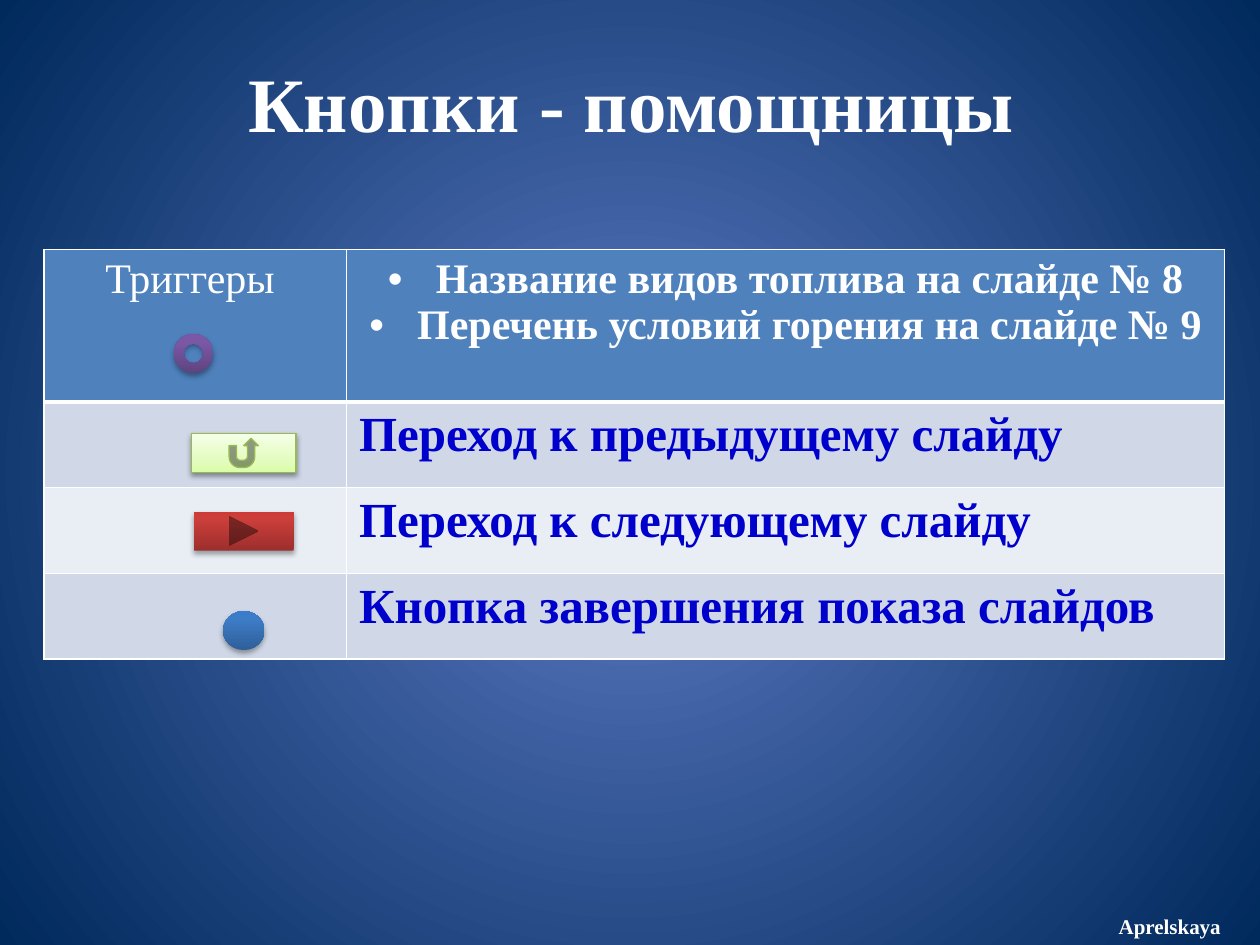
from lxml import etree
from pptx import Presentation, util as u
from pptx.dml.color import RGBColor
from pptx.enum import shapes, text
from pptx.oxml import ns

TITLE = "Кнопки - помощницы"
HEAD = ["Триггеры "], ["Название видов топлива на слайде № 8",
                       "Перечень условий горения на слайде № 9"]
ROWS = ["Переход к предыдущему слайду", "Переход к следующему слайду",
        "Кнопка завершения показа слайдов"]
SIGN = "Aprelskaya"

THEME = {
    "font": "Times New Roman", "white": "FFFFFF", "blue": "0000CC",
    "head": "4F81BD", "bands": ["D0D8E8", "E9EDF4"], "edge": "98B955",
    "title": 44, "cell": 24, "row": 28, "sign": 12,
    "back": [(0, "5E7CC5"), (100, "00295C")],
    "lime": [(0, "DAFDA7"), (35, "E4FCC2"), (100, "F5FFE7")],
    "red": [(0, "9C2F2D"), (80, "CB3E3A"), (100, "CE3B37")],
    "sky": [(0, "2F5F99"), (80, "3D7CC7"), (100, "3A7CCB")],
    "plum": [(0, "5F4480"), (80, "7B58A6"), (100, "7C57A8")],
}
KIND = shapes.MSO_SHAPE
ICONS = [
    (KIND.ACTION_BUTTON_RETURN, (1.52, 3.44, 0.83, 0.31), "lime", 38, 1.6),
    (KIND.ACTION_BUTTON_FORWARD_OR_NEXT, (1.54, 4.06, 0.79, 0.31), "red", 35, 1.8),
    (KIND.OVAL, (1.77, 4.85, 0.33, 0.31), "sky", 35, 1.8),
    (KIND.DONUT, (1.38, 2.65, 0.31, 0.31), "plum", 35, 1.8),
]
COLS = [2.4, 6.97]
TALLS = [1.21] + [0.68] * len(ROWS)
LEFT, TOP = 0.35, 1.98
MID = text.PP_ALIGN.CENTER


def box(*nums):
    return [u.Inches(n) for n in nums]


def node(xml):
    tag, rest = xml.split(" ", 1) if " " in xml.split(">")[0] else (xml.split(">")[0], None)
    space = f' xmlns:a="{ns.nsuri("a")}"'
    return etree.fromstring(tag + space + xml[len(tag):])


def blend(fill, stops, way):
    fill.gradient()
    grad = fill._xPr.find(ns.qn("a:gradFill"))
    for kid in list(grad):
        grad.remove(kid)
    marks = "".join(f'<a:gs pos="{pos * 1000}"><a:srgbClr val="{hue}"/></a:gs>'
                    for pos, hue in stops)
    grad.append(node(f"<a:gsLst>{marks}</a:gsLst>"))
    grad.append(node(way))


def style(part, **form):
    for key, val in form.items():
        setattr(part, key, val)


def write(para, words, size, hue, bold=True):
    para.text = words
    style(para.font, name=THEME["font"], size=u.Pt(size), bold=bold)
    para.font.color.rgb = RGBColor.from_string(hue)


def paint(cell, hue, base):
    cell.fill.solid()
    cell.fill.fore_color.rgb = RGBColor.from_string(hue)
    sides = {"L": 1, "R": 1, "T": 1, "B": base}
    for spot, (side, wide) in enumerate(sides.items()):
        cell._tc.tcPr.insert(spot, node(
            f'<a:ln{side} w="{u.Pt(wide)}"><a:solidFill>'
            f'<a:srgbClr val="{THEME["white"]}"/></a:solidFill></a:ln{side}>'))


def bullet(para):
    props = para._p.get_or_add_pPr()
    props.set("marL", str(u.Inches(0.38)))
    props.set("indent", str(u.Inches(-0.38)))
    props.append(node('<a:buFont typeface="Arial"/>'))
    props.append(node('<a:buChar char="•"/>'))


def grid(slide):
    frame = slide.shapes.add_table(len(TALLS), len(COLS),
                                   *box(LEFT, TOP, sum(COLS), sum(TALLS)))
    table = frame.table
    for col, wide in zip(table.columns, COLS):
        col.width = u.Inches(wide)
    for num, (row, tall) in enumerate(zip(table.rows, TALLS)):
        row.height = u.Inches(tall)
        hue = THEME["bands"][(num - 1) % 2] if num else THEME["head"]
        for cell in row.cells:
            paint(cell, hue, 1 if num else 3)
    for col, lines in enumerate(HEAD):
        body = table.cell(0, col).text_frame
        for num, words in enumerate(lines):
            para = body.add_paragraph() if num else body.paragraphs[0]
            para.alignment = MID
            if col:
                bullet(para)
            write(para, words, THEME["cell"], THEME["white"], bool(col))
    for num, words in enumerate(ROWS, 1):
        write(table.cell(num, 1).text_frame.paragraphs[0], words,
              THEME["row"], THEME["blue"])


def icon(slide, kind, place, tone, dim, gap):
    shape = slide.shapes.add_shape(kind, *box(*place))
    blend(shape.fill, THEME[tone], '<a:lin ang="16200000" scaled="0"/>')
    if tone == "lime":
        shape.line.color.rgb = RGBColor.from_string(THEME["edge"])
        shape.line.width = u.Pt(0.75)
    else:
        shape.line.fill.background()
    shape.shadow.inherit = False
    shape._element.spPr.find(ns.qn("a:effectLst")).append(node(
        f'<a:outerShdw blurRad="{u.Pt(3.1)}" dist="{u.Pt(gap)}" dir="5400000" '
        f'rotWithShape="0"><a:srgbClr val="000000"><a:alpha val="{dim * 1000}"/>'
        '</a:srgbClr></a:outerShdw>'))


def main():
    deck = Presentation()
    style(deck, slide_width=u.Inches(10), slide_height=u.Inches(7.5))
    slide = deck.slides.add_slide(deck.slide_layouts[5])
    blend(slide.background.fill, THEME["back"],
          '<a:path path="circle"><a:fillToRect l="50000" t="50000" '
          'r="50000" b="50000"/></a:path>')
    title = slide.shapes.title
    spots = box(0.51, 0.44, 9, 1.25)
    style(title, **dict(zip(("left", "top", "width", "height"), spots)))
    style(title.text_frame, vertical_anchor=text.MSO_ANCHOR.TOP, margin_top=0)
    head = title.text_frame.paragraphs[0]
    write(head, TITLE, THEME["title"], THEME["white"])
    head.alignment = MID
    grid(slide)
    for item in ICONS:
        icon(slide, *item)
    sign = slide.shapes.add_textbox(*box(8.78, 7.2, 1.02, 0.3)).text_frame
    sign.word_wrap = False
    write(sign.paragraphs[0], SIGN, THEME["sign"], THEME["white"])
    deck.save("out.pptx")


if __name__ == "__main__":
    main()
